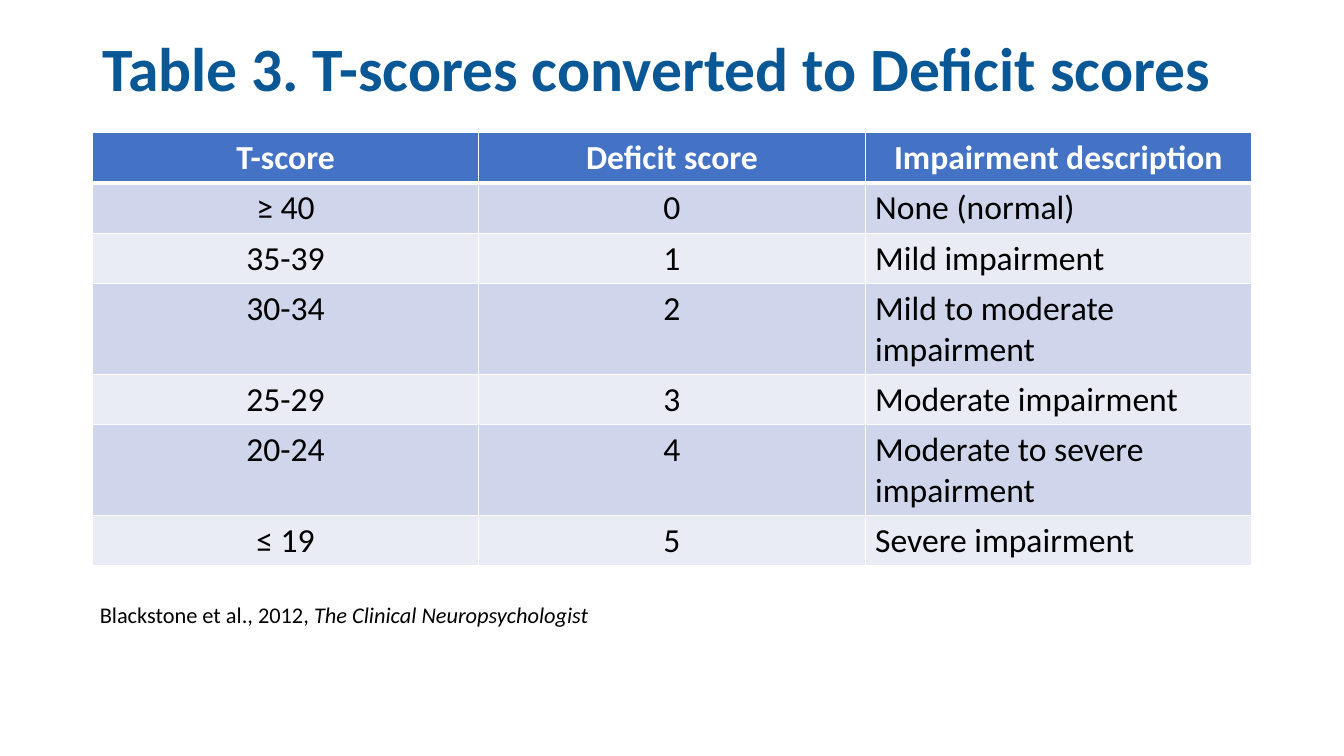
from dataclasses import dataclass

from lxml.etree import SubElement
from pptx import Presentation
from pptx.dml.color import RGBColor
from pptx.enum.text import MSO_ANCHOR, PP_ALIGN
from pptx.oxml.ns import qn
from pptx.slide import Slide
from pptx.table import _Cell
from pptx.text.text import _Paragraph
from pptx.util import Pt


@dataclass(frozen=True)
class Theme:
    font: str = "Calibri"
    title: str = "095895"
    text: str = "000000"
    white: str = "FFFFFF"
    header: str = "4472C4"
    bands: tuple[str, str] = ("CFD5EA", "E9EBF5")
    title_size: float = 44
    table_size: float = 24
    source_size: float = 16


@dataclass(frozen=True)
class Span:
    text: str
    size: float
    color: str
    bold: bool = False
    italic: bool = False


@dataclass(frozen=True)
class TextBox:
    left: float
    top: float
    width: float
    height: float
    spans: tuple[Span, ...]
    anchor: MSO_ANCHOR = MSO_ANCHOR.TOP
    line_spacing: float = 1.0


@dataclass(frozen=True)
class ScoreRow:
    t_score: str
    deficit: str
    description: str

    def texts(self) -> tuple[str, str, str]:
        return self.t_score, self.deficit, self.description


THEME = Theme()
TABLE_LEFT, TABLE_TOP = 66, 94.5
COLUMN_WIDTH, ROW_HEIGHT = 276, 29.2
THIN_BORDER, HEADER_BORDER = 1, 3

SCORE_ROWS = (
    ScoreRow("T-score", "Deficit score", "Impairment description"),
    ScoreRow("≥ 40", "0", "None (normal)"),
    ScoreRow("35-39", "1", "Mild impairment"),
    ScoreRow("30-34", "2", "Mild to moderate impairment"),
    ScoreRow("25-29", "3", "Moderate impairment"),
    ScoreRow("20-24", "4", "Moderate to severe impairment"),
    ScoreRow("≤ 19", "5", "Severe impairment"),
)

TEXT_BOXES = (
    # Title
    TextBox(66, 18.5, 828, 65.5,
            (Span("Table 3. T-scores converted to Deficit scores",
                  THEME.title_size, THEME.title, bold=True),),
            MSO_ANCHOR.MIDDLE, 0.9),
    # Source of the table
    TextBox(64.2, 425.5, 387.5, 26.6,
            (Span("Blackstone et al., 2012, ", THEME.source_size, THEME.text),
             Span("The Clinical Neuropsychologist", THEME.source_size, THEME.text,
                  italic=True))),
)


def add_span(para: _Paragraph, span: Span) -> None:
    run = para.add_run()
    run.text = span.text
    run.font.name = THEME.font
    run.font.size = Pt(span.size)
    run.font.bold = span.bold
    run.font.italic = span.italic
    run.font.color.rgb = RGBColor.from_string(span.color)


def add_text_box(page: Slide, item: TextBox) -> None:
    box = page.shapes.add_textbox(
        Pt(item.left), Pt(item.top), Pt(item.width), Pt(item.height))
    frame = box.text_frame
    frame.word_wrap = True
    frame.vertical_anchor = item.anchor
    para = frame.paragraphs[0]
    para.line_spacing = item.line_spacing
    for span in item.spans:
        add_span(para, span)


def set_borders(cell: _Cell, top: float, bottom: float) -> None:
    properties = cell._tc.get_or_add_tcPr()
    widths = {"a:lnL": THIN_BORDER, "a:lnR": THIN_BORDER, "a:lnT": top, "a:lnB": bottom}
    for tag, width in widths.items():
        line = SubElement(properties, qn(tag), w=str(Pt(width)))
        fill = SubElement(line, qn("a:solidFill"))
        SubElement(fill, qn("a:srgbClr"), val=THEME.white)


def add_score_table(page: Slide, rows: tuple[ScoreRow, ...]) -> None:
    column_count = len(rows[0].texts())
    table = page.shapes.add_table(
        len(rows), column_count, Pt(TABLE_LEFT), Pt(TABLE_TOP),
        Pt(COLUMN_WIDTH * column_count), Pt(ROW_HEIGHT * len(rows))).table
    for column in table.columns:
        column.width = Pt(COLUMN_WIDTH)
    for row_index, row in enumerate(rows):
        table.rows[row_index].height = Pt(ROW_HEIGHT)
        is_header = row_index == 0
        fill = THEME.header if is_header else THEME.bands[(row_index - 1) % 2]
        color = THEME.white if is_header else THEME.text
        for column_index, text in enumerate(row.texts()):
            cell = table.cell(row_index, column_index)
            # Borders come before the fill in the cell properties
            set_borders(cell,
                        top=HEADER_BORDER if row_index == 1 else THIN_BORDER,
                        bottom=HEADER_BORDER if is_header else THIN_BORDER)
            cell.fill.solid()
            cell.fill.fore_color.rgb = RGBColor.from_string(fill)
            para = cell.text_frame.paragraphs[0]
            centred = is_header or column_index < column_count - 1
            para.alignment = PP_ALIGN.CENTER if centred else PP_ALIGN.LEFT
            add_span(para, Span(text, THEME.table_size, color, bold=is_header))


def main() -> None:
    deck = Presentation()
    deck.slide_width, deck.slide_height = Pt(960), Pt(540)
    page = deck.slides.add_slide(deck.slide_layouts[6])
    title, source = TEXT_BOXES
    add_text_box(page, title)
    add_score_table(page, SCORE_ROWS)
    add_text_box(page, source)
    deck.save("out.pptx")


if __name__ == "__main__":
    main()
